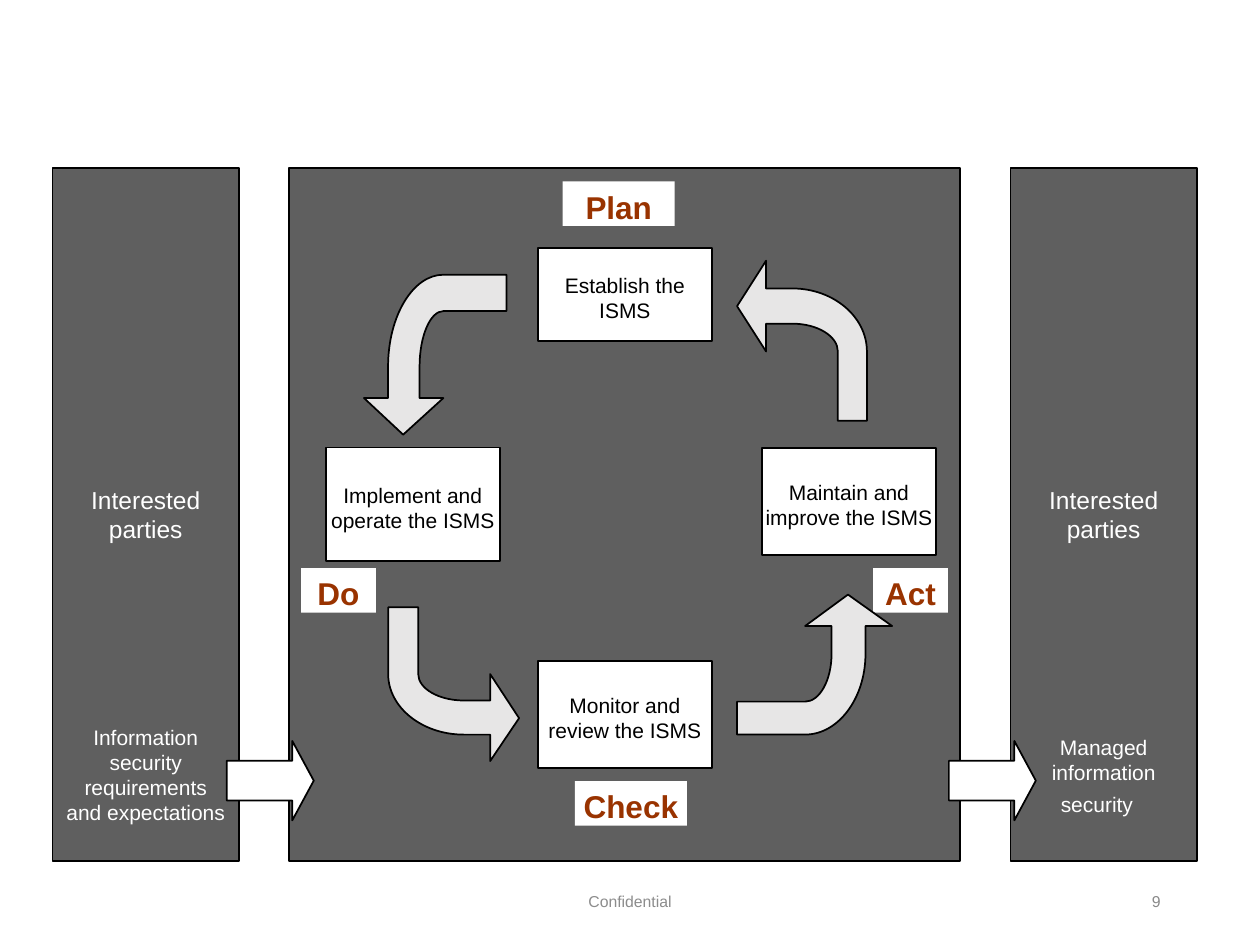
from lxml import etree
from pptx import Presentation
from pptx.dml.color import RGBColor
from pptx.enum.shapes import MSO_SHAPE
from pptx.enum.text import MSO_ANCHOR, PP_ALIGN
from pptx.oxml.ns import qn
from pptx.util import Pt

RECTANGLE, RIGHT_ARROW = MSO_SHAPE.RECTANGLE, MSO_SHAPE.RIGHT_ARROW
TOP, MIDDLE = MSO_ANCHOR.TOP, MSO_ANCHOR.MIDDLE
CENTER, RIGHT = PP_ALIGN.CENTER, PP_ALIGN.RIGHT

FONT = "Arial"
BLACK, WHITE, PANEL, ARROW, ACCENT = "000000", "FFFFFF", "5F5F5F", "E7E6E6", "993300"
PANEL_TOP, PANEL_HEIGHT = 96, 396
PARTY_WIDTH, STEP_WIDTH, LABEL_HEIGHT = 106.6, 99.4, 25.4
SNUG = (0, 3.6, 0, 0)
ROOMY = (7.2, 3.6, 7.2, 3.6)
ROUNDNESS = 0.55

PANELS = [
    ("", 165, 383.8),
    ("Interested parties", 30, PARTY_WIDTH),
    ("Interested parties", 577.4, PARTY_WIDTH),
]
STEPS = [
    ("Establish the ISMS", 307.4, 141.8, 53.3),
    ("Implement and operate the ISMS", 186.2, 255.8, 64.8),
    ("Maintain and improve the ISMS", 435.4, 255.8, 61.2),
    ("Monitor and review the ISMS", 307.4, 377.8, 61.2),
]
LABELS = [
    ("Plan", 321.6, 103.7, 64),
    ("Do", 172.1, 324.7, 42.7),
    ("Act", 499, 324.7, 42.7),
    ("Check", 328.5, 446.4, 64),
]
# Pairs are corners; quadruples are rounded corners: (corner x, corner y, end x, end y).
CYCLE_ARROWS = [
    [(230.4, 248.4), (208, 227.5), (221.8, 227.5), (221.8, 209.5),
     (221.8, 157, 253.4, 157), (289.4, 157), (289.4, 177.8), (253.4, 177.8),
     (239.8, 177.8, 239.8, 209.5), (239.8, 227.5), (253.4, 227.5)],
    [(421.2, 175), (437.8, 149), (437.8, 164.9), (452.9, 164.9),
     (495.4, 164.9, 495.4, 200.9), (495.4, 240.5), (478.8, 240.5), (478.8, 200.9),
     (478.8, 185, 452.9, 185), (437.8, 185), (437.8, 200.9)],
    [(484.6, 339.8), (509.8, 357.8), (494.6, 357.8), (494.6, 373.7),
     (494.6, 419.8, 460.1, 419.8), (421.2, 419.8), (421.2, 401), (460.1, 401),
     (475.2, 401, 475.2, 373.7), (475.2, 357.8), (460.1, 357.8)],
    [(296.6, 410.4), (280.1, 434.9), (280.1, 419.8), (265, 419.8),
     (221.8, 419.8, 221.8, 385.2), (221.8, 347), (239, 347), (239, 385.2),
     (239, 400.3, 265, 400.3), (280.1, 400.3), (280.1, 385.2)],
]
FLOW_ARROWS = [129.6, 542.2]
FLOWS = [
    ("Information security requirements and expectations", 30, 410.4, 69.8),
    ("Managed information security ", 577.4, 416.2, 55.4),
]
FOOTERS = [
    ("Confidential", 238.3, 243.4, CENTER, "8C8C8C"),
    ("9", 508.3, 162, RIGHT, "898989"),
]


def color(hex_value):
    return RGBColor.from_string(hex_value)


def paint(shape, fill, outlined=True):
    shape.shadow.inherit = False
    shape.fill.solid()
    shape.fill.fore_color.rgb = color(fill)
    if outlined:
        shape.line.color.rgb = color(BLACK)
        shape.line.width = Pt(1)
    else:
        shape.line.fill.background()


def write(shape, text, size, ink, anchor=MIDDLE, align=CENTER, insets=ROOMY, bold=False):
    frame = shape.text_frame
    frame.word_wrap = True
    frame.vertical_anchor = anchor
    frame.margin_left, frame.margin_top, frame.margin_right, frame.margin_bottom = map(Pt, insets)
    frame.text = text
    paragraph = frame.paragraphs[0]
    paragraph.alignment = align
    for run in paragraph.runs:
        run.font.name = FONT
        run.font.size = Pt(size)
        run.font.bold = bold
        run.font.color.rgb = color(ink)
    return paragraph


def add_box(kind, left, top, width, height, fill, outlined=True):
    box = slide.shapes.add_shape(kind, Pt(left), Pt(top), Pt(width), Pt(height))
    paint(box, fill, outlined)
    return box


def add_text(left, top, width, height):
    return slide.shapes.add_textbox(Pt(left), Pt(top), Pt(width), Pt(height))


def add_curved_arrow(outline):
    ends = [piece[-2:] for piece in outline]
    first, *rest = [(Pt(x), Pt(y)) for x, y in ends]
    builder = slide.shapes.build_freeform(*first)
    builder.add_line_segments(rest, close=True)
    arrow = builder.convert_to_shape()
    paint(arrow, ARROW)
    segments = list(arrow.element.iter(qn("a:lnTo")))
    for segment, start, piece in zip(segments, ends, outline[1:]):
        if len(piece) == 4:
            corner = piece[:2]
            segment.tag = qn("a:cubicBezTo")
            controls = [
                [a + (c - a) * ROUNDNESS for a, c in zip(anchor, corner)]
                for anchor in (start, piece[2:])
            ]
            for position, (x, y) in enumerate(controls):
                control = etree.Element(qn("a:pt"))
                control.set("x", str(Pt(x) - arrow.left))
                control.set("y", str(Pt(y) - arrow.top))
                segment.insert(position, control)


deck = Presentation()
deck.slide_width, deck.slide_height = Pt(720), Pt(540)
slide = deck.slides.add_slide(deck.slide_layouts[6])

for text, left, width, align, ink in FOOTERS:
    write(add_text(left, 500.4, width, 28.8), text, 9, ink, align=align)

for text, left, width in PANELS:
    panel = add_box(RECTANGLE, left, PANEL_TOP, width, PANEL_HEIGHT, PANEL)
    if text:
        write(panel, text, 14, WHITE)

for text, left, top, height in STEPS:
    step_box = add_box(RECTANGLE, left, top, STEP_WIDTH, height, WHITE)
    write(step_box, text, 12, BLACK, insets=SNUG)

for text, left, top, width in LABELS:
    label = add_box(RECTANGLE, left, top, width, LABEL_HEIGHT, WHITE, outlined=False)
    write(label, text, 18, ACCENT, anchor=TOP, insets=SNUG, bold=True)

for outline in CYCLE_ARROWS:
    add_curved_arrow(outline)

for left in FLOW_ARROWS:
    flow_arrow = add_box(RIGHT_ARROW, left, 423.4, 49.7, 45.4, WHITE)
    flow_arrow.adjustments[0] = 0.5
    flow_arrow.adjustments[1] = 0.27

for text, left, top, height in FLOWS:
    flow = write(add_text(left, top, PARTY_WIDTH, height), text, 12, WHITE, anchor=TOP)
    if text.endswith(" "):
        spacer = flow.add_run()
        spacer.text = " "
        spacer.font.name = FONT
        spacer.font.size = Pt(16)

deck.save("out.pptx")
